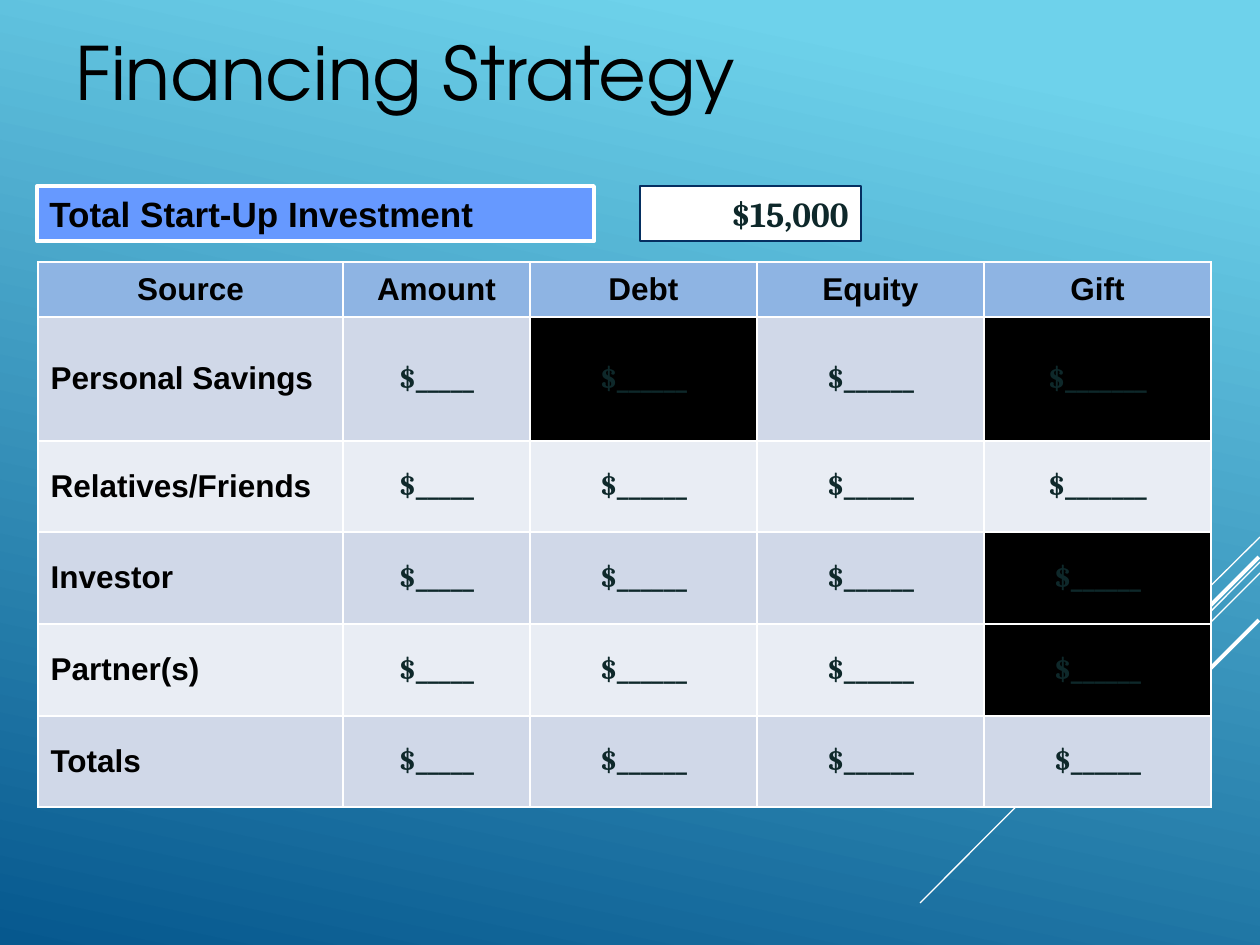
from lxml import etree
from pptx import Presentation
from pptx.dml.color import RGBColor
from pptx.enum.shapes import MSO_CONNECTOR, MSO_SHAPE
from pptx.enum.text import MSO_ANCHOR, PP_ALIGN
from pptx.oxml import parse_xml
from pptx.oxml.ns import nsdecls, qn
from pptx.util import Pt

PX = 914400 / 126
LEFT, CENTER, RIGHT = PP_ALIGN.LEFT, PP_ALIGN.CENTER, PP_ALIGN.RIGHT
TOP, MIDDLE = MSO_ANCHOR.TOP, MSO_ANCHOR.MIDDLE
STRAIGHT, RECT = MSO_CONNECTOR.STRAIGHT, MSO_SHAPE.RECTANGLE
BLACK, WHITE, INK = "000000", "FFFFFF", "0E282A"


def px(*lengths):
    return [round(n * PX) for n in lengths]


def style(p, size, font, color, align=LEFT, bold=True):
    p.alignment = align
    for r in p.runs:
        r.font.size = Pt(size)
        r.font.name = font
        r.font.bold = bold
        r.font.color.rgb = RGBColor.from_string(color)


prs = Presentation()
prs.slide_width, prs.slide_height = px(1260, 945)
s = prs.slides.add_slide(prs.slide_layouts[5])

# Background gradient
fill = s.background.fill
fill.gradient()
fill.gradient_angle = 258
for stop, (position, color) in zip(fill.gradient_stops, [(0.1, "6ED2EB"), (1, "06588E")]):
    stop.position = position
    stop.color.rgb = RGBColor.from_string(color)

# Diagonal lines at the right edge
for x1, y1, x2, y2, width in [
    (1260, 537, 1155, 641, 0.75),
    (1260, 562, 920, 903, 0.75),
    (1260, 573, 1043, 790, 0.75),
    (1259, 557, 1061, 755, 2.25),
    (1259, 620, 1115, 764, 2.25),
]:
    line = s.shapes.add_connector(STRAIGHT, *px(x1, y1, x2, y2))
    line.line.color.rgb = RGBColor.from_string(WHITE)
    line.line.width = Pt(width)
    etree.SubElement(line._element.spPr, qn("a:effectLst"))

# Title
title = s.shapes.title
title.left, title.top, title.width, title.height = px(63, 21, 1134, 147)
tf = title.text_frame
tf.text = "Financing Strategy"
tf.vertical_anchor = TOP
style(tf.paragraphs[0], 42, "TeX Gyre Adventor", BLACK, bold=False)

# Financing table
columns = [305, 187, 227, 227, 227]
heights = [55, 124, 91, 92, 92, 91]
blanks = ["$_____", "$______", "$______"]
rows = [
    ["Source", "Amount", "Debt", "Equity", "Gift"],
    ["Personal Savings", *blanks, "$_______"],
    ["Relatives/Friends", *blanks, "$_______"],
    ["Investor", *blanks, "$______"],
    ["Partner(s)", *blanks, "$______"],
    ["Totals", *blanks, "$______"],
]
blocked = {(1, 2), (1, 4), (3, 4), (4, 4)}
table = s.shapes.add_table(len(rows), len(columns),
                           *px(38, 262, sum(columns), sum(heights))).table
table.first_row = table.horz_banding = False
for column, width in zip(table.columns, px(*columns)):
    column.width = width
for row, height in zip(table.rows, px(*heights)):
    row.height = height

for i, texts in enumerate(rows):
    for j, text in enumerate(texts):
        cell = table.cell(i, j)
        cell.text_frame.text = text
        cell.vertical_anchor = MIDDLE
        label = i == 0 or j == 0
        style(cell.text_frame.paragraphs[0], 18,
              "Arial" if label else "Cambria",
              BLACK if label else INK,
              LEFT if i and j == 0 else CENTER)
        if i == 0:
            color = "8EB4E3"
        elif (i, j) in blocked:
            color = BLACK
        else:
            color = "D0D8E8" if i % 2 else "E9EDF4"
        cell.fill.solid()
        cell.fill.fore_color.rgb = RGBColor.from_string(color)
        # Cell borders come before the fill
        for k, side in enumerate(["lnL", "lnR", "lnT", "lnB"]):
            cell._tc.tcPr.insert(k, parse_xml(
                f'<a:{side} {nsdecls("a")} w="12700"><a:solidFill>'
                f'<a:srgbClr val="{WHITE}"/></a:solidFill></a:{side}>'))

# Total investment: value and label
for text, x, width, color, border, weight, font, ink, align in [
    ("$15,000", 640, 221, WHITE, "052F61", 1.5, "Cambria", INK, RIGHT),
    ("Total Start-Up Investment", 37, 557, "6699FF", WHITE, 2.25, "Arial", BLACK, LEFT),
]:
    sp = s.shapes.add_shape(RECT, *px(x, 186, width, 55))
    sp.shadow.inherit = False
    sp.fill.solid()
    sp.fill.fore_color.rgb = RGBColor.from_string(color)
    sp.line.color.rgb = RGBColor.from_string(border)
    sp.line.width = Pt(weight)
    tf = sp.text_frame
    tf.text = text
    tf.word_wrap = True
    tf.vertical_anchor = TOP
    style(tf.paragraphs[0], 20, font, ink, align)

prs.save("out.pptx")
